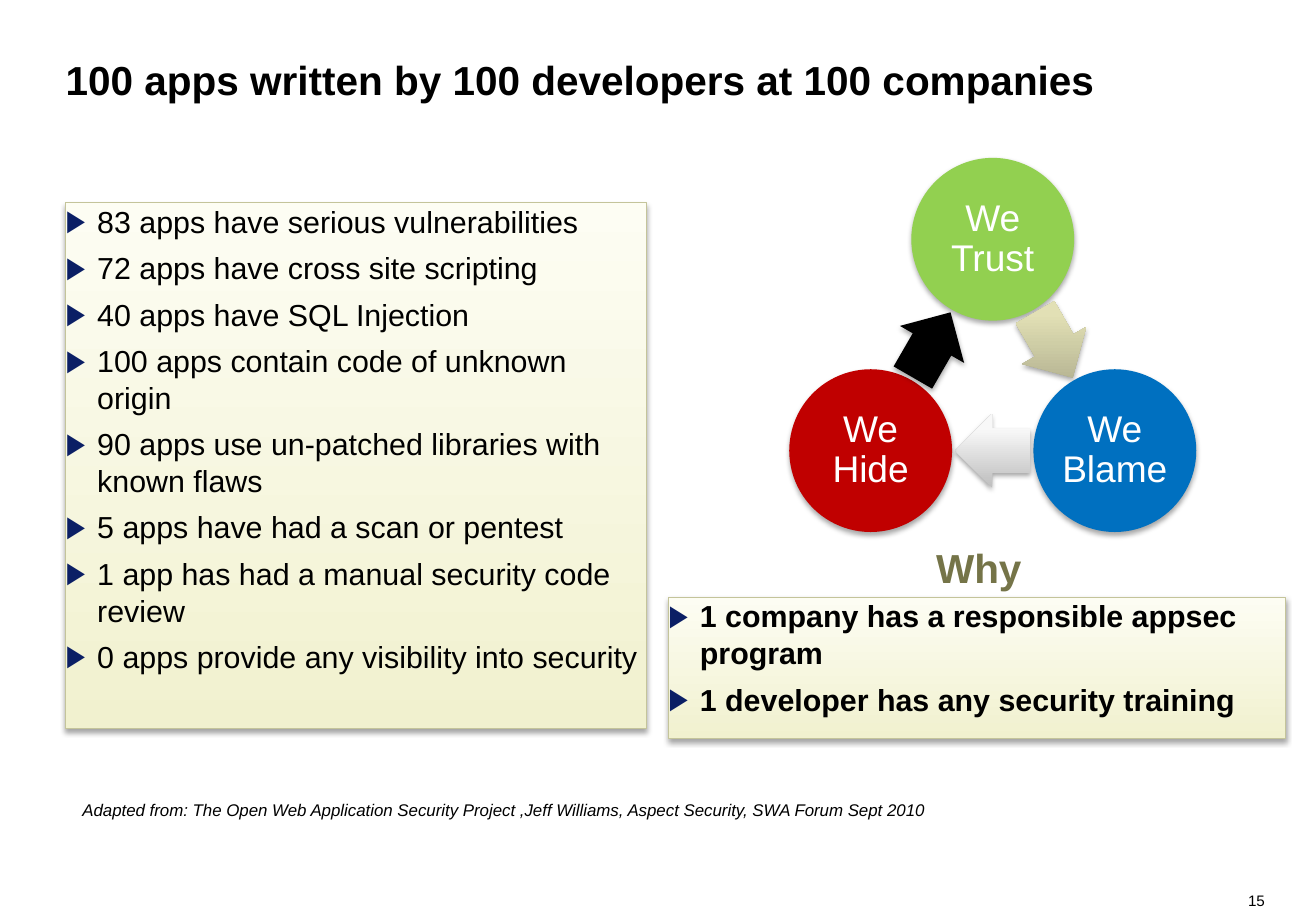
from dataclasses import dataclass
from math import cos, radians, sin

from lxml import etree
from pptx import Presentation
from pptx.dml.color import RGBColor
from pptx.enum.shapes import MSO_SHAPE
from pptx.enum.text import MSO_ANCHOR, MSO_AUTO_SIZE, PP_ALIGN
from pptx.oxml.ns import qn
from pptx.util import Inches, Pt

OVAL, ARROW = MSO_SHAPE.OVAL, MSO_SHAPE.RIGHT_ARROW
LEFT, CENTER, RIGHT = PP_ALIGN.LEFT, PP_ALIGN.CENTER, PP_ALIGN.RIGHT
TOP, MIDDLE, BOTTOM = MSO_ANCHOR.TOP, MSO_ANCHOR.MIDDLE, MSO_ANCHOR.BOTTOM
NO_AUTOFIT = MSO_AUTO_SIZE.NONE

CYCLE_X, CYCLE_Y, CYCLE_RADIUS = 8.17, 3.13, 1.16
NODE_SIZE = 1.34
ARROW_WIDTH, ARROW_HEIGHT = 0.62, 0.61
INDENT = 0.26


@dataclass
class Style:
    size: float
    color: str = "000000"
    bold: bool = False
    italic: bool = False
    align: int = LEFT
    spacing: float = 1.0
    bulleted: bool = False


@dataclass
class CycleStep:
    label: str
    color: str
    arrow_colors: tuple[str, ...]


STEPS = [
    CycleStep("We Trust", "92D050", ("ACAB8B", "E2E0B5")),
    CycleStep("We Blame", "0070C0", ("BEBEBE", "F8F8F8")),
    CycleStep("We Hide", "C00000", ("000000",)),
]

FINDINGS = [
    "83 apps have serious vulnerabilities",
    "72 apps have cross site scripting",
    "40 apps have SQL Injection",
    "100 apps contain code of unknown origin",
    "90 apps use un-patched libraries with known flaws",
    "5 apps have had a scan or pentest",
    "1 app has had a manual security code review",
    "0 apps provide any visibility into security",
]
REASONS = [
    "1 company has a responsible appsec program",
    "1 developer has any security training",
]


def rgb(value: str) -> RGBColor:
    return RGBColor.from_string(value)


def place(shape, left: float, top: float, width: float, height: float) -> None:
    shape.left, shape.top = Inches(left), Inches(top)
    shape.width, shape.height = Inches(width), Inches(height)


def add_bullet(paragraph) -> None:
    properties = paragraph._p.get_or_add_pPr()
    properties.set("marL", str(Inches(INDENT)))
    properties.set("indent", str(-Inches(INDENT)))
    color = etree.SubElement(properties, qn("a:buClr"))
    etree.SubElement(color, qn("a:srgbClr"), val="0B1F65")
    etree.SubElement(properties, qn("a:buFont"), typeface="Arial")
    etree.SubElement(properties, qn("a:buChar"), char="▶")


def write(shape, lines: list[str], style: Style, anchor: int = TOP,
          inset: float = 0, wrap: bool = True) -> None:
    frame = shape.text_frame
    frame.auto_size = NO_AUTOFIT
    frame.word_wrap = wrap
    frame.vertical_anchor = anchor
    frame.margin_left = frame.margin_right = Inches(inset)
    frame.margin_top = frame.margin_bottom = Inches(inset)
    for index, line in enumerate(lines):
        paragraph = frame.add_paragraph() if index else frame.paragraphs[0]
        if style.bulleted:
            add_bullet(paragraph)
        paragraph.alignment = style.align
        paragraph.line_spacing = style.spacing
        paragraph.space_before = Pt(6 if index else 0)
        run = paragraph.add_run()
        run.text = line
        font = run.font
        font.name, font.size = "Arial", Pt(style.size)
        font.bold, font.italic = style.bold, style.italic
        font.color.rgb = rgb(style.color)


def paint(shape, colors: tuple[str, ...], light_end: float = 1.0) -> None:
    if len(colors) == 1:
        shape.fill.solid()
        shape.fill.fore_color.rgb = rgb(colors[0])
        return
    shape.fill.gradient()
    shape.fill.gradient_angle = 90
    for stop, color, position in zip(shape.fill.gradient_stops, colors, (0, light_end)):
        stop.color.rgb = rgb(color)
        stop.position = position
    shape._element.spPr.find(qn("a:gradFill")).set("rotWithShape", "0")


def add_shadow(shape) -> None:
    shape.shadow.inherit = False
    effects = shape._element.spPr.find(qn("a:effectLst"))
    shadow = etree.SubElement(effects, qn("a:outerShdw"), blurRad=str(Pt(3.1)),
                              dist=str(Pt(1.8)), dir="5400000", rotWithShape="0")
    color = etree.SubElement(shadow, qn("a:srgbClr"), val="000000")
    etree.SubElement(color, qn("a:alpha"), val="35000")


def frame_panel(panel) -> None:
    paint(panel, ("F1F1CF", "FDFDF3"))
    panel.line.color.rgb = rgb("C4C49A")
    panel.line.width = Pt(0.75)
    add_shadow(panel)


def add_cycle_part(slide, kind: int, angle: float, radius: float,
                   width: float, height: float):
    x = CYCLE_X + radius * cos(radians(angle))
    y = CYCLE_Y + radius * sin(radians(angle))
    part = slide.shapes.add_shape(kind, Inches(x - width / 2), Inches(y - height / 2),
                                  Inches(width), Inches(height))
    part.line.fill.background()
    add_shadow(part)
    return part


def draw_cycle(slide) -> None:
    label_style = Style(22, "FFFFFF", align=CENTER, spacing=0.9)
    for index, step in enumerate(STEPS):
        turn = 120 * index
        node = add_cycle_part(slide, OVAL, turn - 90, CYCLE_RADIUS, NODE_SIZE, NODE_SIZE)
        paint(node, (step.color,))
        write(node, [step.label], label_style, MIDDLE, 0.03)
        arrow = add_cycle_part(slide, ARROW, turn - 30, CYCLE_RADIUS / 2,
                               ARROW_WIDTH, ARROW_HEIGHT)
        arrow.rotation = turn + 60
        arrow.adjustments[0], arrow.adjustments[1] = 0.6, 0.5
        paint(arrow, step.arrow_colors, 0.8)


def add_note(slide, text: str, left: float, top: float, width: float, height: float,
             style: Style, inset: float = 0, wrap: bool = True) -> None:
    note = slide.shapes.add_textbox(Inches(left), Inches(top), Inches(width), Inches(height))
    write(note, [text], style, inset=inset, wrap=wrap)


def main() -> None:
    deck = Presentation()
    deck.slide_width, deck.slide_height = Inches(10.83), Inches(7.5)
    slide = deck.slides.add_slide(deck.slide_layouts[4])
    title, why, findings, spare_heading, reasons = slide.placeholders
    spare_heading._element.getparent().remove(spare_heading._element)

    place(title, 0.54, 0.3, 9.75, 0.56)
    write(title, ["100 apps written by 100 developers at 100 companies"],
          Style(24, bold=True, spacing=0.9), BOTTOM)
    place(findings, 0.54, 1.67, 4.78, 4.33)
    frame_panel(findings)
    write(findings, FINDINGS, Style(18, bulleted=True))
    place(why, 5.66, 4.17, 4.79, 0.7)
    write(why, ["Why"], Style(24, "757448", bold=True, align=CENTER), BOTTOM)
    place(reasons, 5.5, 4.92, 5.08, 1.16)
    frame_panel(reasons)
    write(reasons, REASONS, Style(18, bold=True, bulleted=True))

    add_note(slide, "Adapted from: The Open Web Application Security Project ,Jeff Williams, "
             "Aspect Security, SWA Forum Sept 2010", 0.58, 6.48, 7.83, 0.27,
             Style(10, italic=True), inset=0.1)
    add_note(slide, "15", 10.26, 7.34, 0.15, 0.15, Style(9, align=RIGHT), wrap=False)
    draw_cycle(slide)
    deck.save("out.pptx")


if __name__ == "__main__":
    main()
